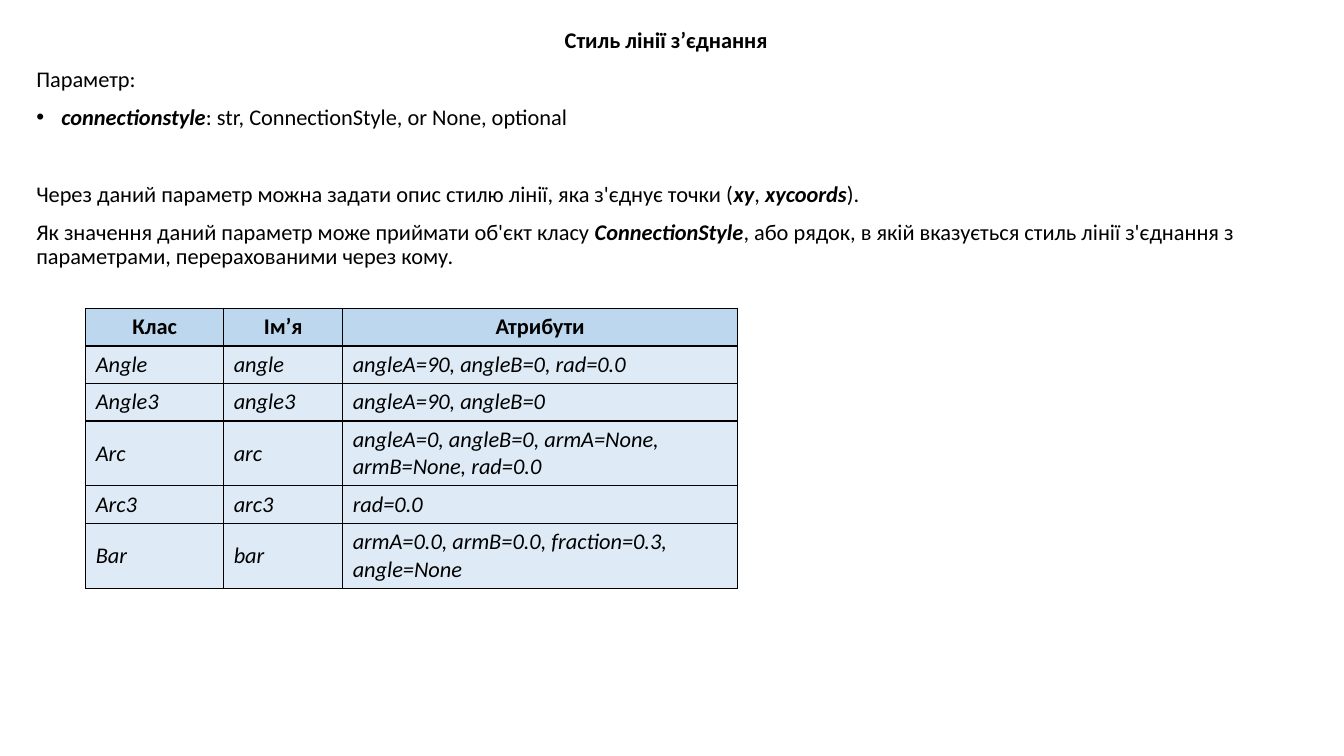
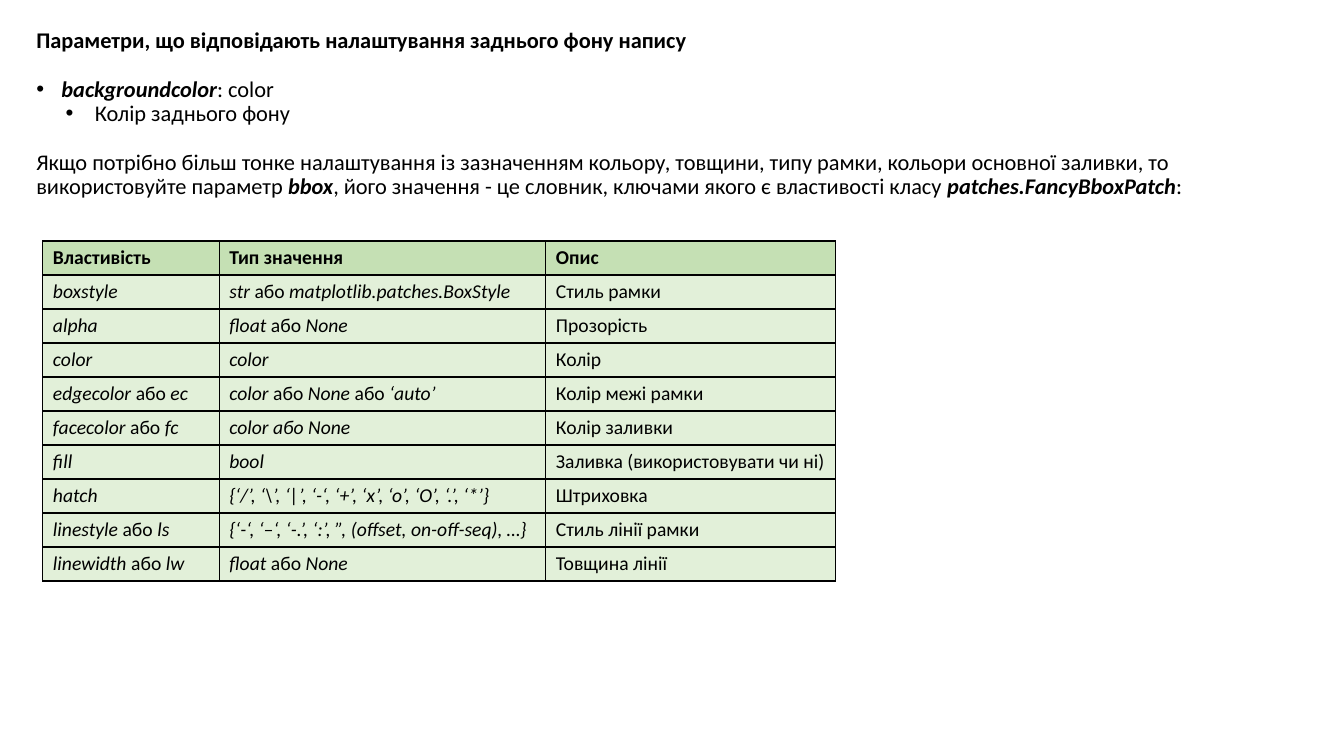
from dataclasses import dataclass

from lxml import etree
from pptx import Presentation
from pptx.dml.color import RGBColor
from pptx.enum.text import MSO_ANCHOR, MSO_AUTO_SIZE, PP_ALIGN
from pptx.oxml.ns import qn
from pptx.util import Pt

BLACK = RGBColor(0x00, 0x00, 0x00)
BLUE_HEAD = RGBColor(0xBD, 0xD7, 0xEE)
BLUE_BODY = RGBColor(0xDE, 0xEB, 0xF7)
GREEN_HEAD = RGBColor(0xC5, 0xE0, 0xB4)
GREEN_BODY = RGBColor(0xE2, 0xF0, 0xD9)

FONT = "Calibri"
TEXT_SIZE = 16
LINE_SPACING = 0.9
SLIDE_WIDTH, SLIDE_HEIGHT = 960, 540
TEXT_LEFT, TEXT_WIDTH = 18.7, 914.4
TITLE_TOP, TITLE_HEIGHT = 17.3, 24.7
BORDER_WIDTH = 1

# Left margin and first-line indent of each bullet level; level 0 has no bullet
BULLET_INDENTS = [(0, 0), (18, -18), (41.8, -20.9)]


@dataclass
class Line:
    text: str
    bullet_level: int = 0
    space_before: float = 0


@dataclass
class TableLook:
    head_fill: RGBColor
    body_fill: RGBColor
    size: float
    head_align: PP_ALIGN


def add_runs(paragraph, text, size, bold=False, emphasis_bold=False):
    """Write text, setting the parts between underscores in italics."""
    for index, piece in enumerate(text.split("_")):
        if not piece:
            continue
        emphasised = index % 2 == 1
        run = paragraph.add_run()
        run.text = piece
        font = run.font
        font.name, font.size = FONT, Pt(size)
        font.color.rgb = BLACK
        font.bold = bold or (emphasised and emphasis_bold)
        font.italic = emphasised


def place(shape, left, top, width, height):
    shape.left, shape.top = Pt(left), Pt(top)
    shape.width, shape.height = Pt(width), Pt(height)
    frame = shape.text_frame
    frame.word_wrap = True
    frame.auto_size = MSO_AUTO_SIZE.NONE
    frame.vertical_anchor = MSO_ANCHOR.TOP
    return frame


def set_bullet(paragraph, level):
    properties = paragraph._p.get_or_add_pPr()
    margin, indent = BULLET_INDENTS[level]
    properties.set("marL", str(Pt(margin)))
    properties.set("indent", str(Pt(indent)))
    if level:
        paragraph.level = level - 1
        font = etree.SubElement(properties, qn("a:buFont"))
        font.set("typeface", "Arial")
        etree.SubElement(properties, qn("a:buChar")).set("char", "•")
    else:
        etree.SubElement(properties, qn("a:buNone"))


def fill_title(slide, text, align):
    frame = place(slide.shapes.title, TEXT_LEFT, TITLE_TOP, TEXT_WIDTH, TITLE_HEIGHT)
    heading = frame.paragraphs[0]
    heading.alignment = align
    heading.line_spacing = LINE_SPACING
    heading.space_before = Pt(0)
    add_runs(heading, text, TEXT_SIZE, bold=True)


def fill_body(slide, lines, top, bottom):
    frame = place(slide.placeholders[1], TEXT_LEFT, top, TEXT_WIDTH, bottom - top)
    for index, line in enumerate(lines):
        paragraph = frame.add_paragraph() if index else frame.paragraphs[0]
        set_bullet(paragraph, line.bullet_level)
        paragraph.line_spacing = LINE_SPACING
        paragraph.space_before = Pt(line.space_before)
        add_runs(paragraph, line.text, TEXT_SIZE, emphasis_bold=True)


def add_borders(cell):
    properties = cell._tc.get_or_add_tcPr()
    for side in ("a:lnL", "a:lnR", "a:lnT", "a:lnB"):
        border = etree.SubElement(properties, qn(side))
        border.set("w", str(Pt(BORDER_WIDTH)))
        fill = etree.SubElement(border, qn("a:solidFill"))
        etree.SubElement(fill, qn("a:srgbClr")).set("val", str(BLACK))


def add_property_table(slide, left, top, widths, heights, rows, look):
    table = slide.shapes.add_table(
        len(rows), len(widths), Pt(left), Pt(top), Pt(sum(widths)), Pt(sum(heights))
    ).table
    table.horz_banding = False
    for column, width in zip(table.columns, widths):
        column.width = Pt(width)
    for row_index, (row, texts, height) in enumerate(zip(table.rows, rows, heights)):
        row.height = Pt(height)
        is_head = row_index == 0
        for cell, text in zip(row.cells, texts):
            add_borders(cell)
            cell.fill.solid()
            cell.fill.fore_color.rgb = look.head_fill if is_head else look.body_fill
            cell.vertical_anchor = MSO_ANCHOR.MIDDLE
            paragraph = cell.text_frame.paragraphs[0]
            paragraph.alignment = look.head_align if is_head else PP_ALIGN.LEFT
            add_runs(paragraph, text, look.size, bold=is_head)


def build_connection_slide(slide):
    table_top = 220.3
    fill_title(slide, "Стиль лінії з’єднання", PP_ALIGN.CENTER)
    fill_body(slide, [
        Line("Параметр:"),
        Line("_connectionstyle_: str, ConnectionStyle, or None, optional", 1, 10),
        Line("Через даний параметр можна задати опис стилю лінії, яка з'єднує точки "
             "(_xy_, _xycoords_).", space_before=37.5),
        Line("Як значення даний параметр може приймати об'єкт класу _ConnectionStyle_, "
             "або рядок, в якій вказується стиль лінії з'єднання з параметрами, "
             "перерахованими через кому.", space_before=10),
    ], top=45, bottom=table_top)
    one_line, two_lines = 26.75, 46.25
    add_property_table(
        slide, 61.2, table_top, [98.6, 85, 282.2],
        [one_line, one_line, one_line, two_lines, one_line, two_lines],
        [
            ("Клас", "Ім’я", "Атрибути"),
            ("_Angle_", "_angle_", "_angleA=90, angleB=0, rad=0.0_"),
            ("_Angle3_", "_angle3_", "_angleA=90, angleB=0_"),
            ("_Arc_", "_arc_", "_angleA=0, angleB=0, armA=None, armB=None, rad=0.0_"),
            ("_Arc3_", "_arc3_", "_rad=0.0_"),
            ("_Bar_", "_bar_", "_armA=0.0, armB=0.0, fraction=0.3, angle=None_"),
        ],
        TableLook(BLUE_HEAD, BLUE_BODY, 16, PP_ALIGN.CENTER),
    )


def build_background_slide(slide):
    table_top = 172.1
    fill_title(slide, "Параметри, що відповідають налаштування заднього фону напису",
               PP_ALIGN.LEFT)
    fill_body(slide, [
        Line("_backgroundcolor_: color", 1),
        Line("Колір заднього фону", 2),
        Line("Якщо потрібно більш тонке налаштування із зазначенням кольору, товщини, "
             "типу рамки, кольори основної заливки, то використовуйте параметр _bbox_, "
             "його значення - це словник, ключами якого є властивості класу "
             "_patches.FancyBboxPatch_:", space_before=17.5),
    ], top=52.2, bottom=table_top)
    rows = [
        ("Властивість", "Тип значення", "Опис"),
        ("_boxstyle_", "_str_ або _matplotlib.patches.BoxStyle_", "Стиль рамки"),
        ("_alpha_", "_float_ або _None_", "Прозорість"),
        ("_color_", "_color_", "Колір"),
        ("_edgecolor_ або _ec_", "_color_ або _None_ або _‘auto’_", "Колір межі рамки"),
        ("_facecolor_ або _fc_", "_color або None_", "Колір заливки"),
        ("_fill_", "_bool_", "Заливка (використовувати чи ні)"),
        ("_hatch_", "_{‘/’, ‘\\’, ‘|’, ‘-‘, ‘+’, ‘x’, ‘o’, ‘O’, ‘.’, ‘*’}_", "Штриховка"),
        ("_linestyle_ або _ls_", "_{‘-‘, ‘–‘, ‘-.’, ‘:’, ”, (offset, on-off-seq), …}_",
         "Стиль лінії рамки"),
        ("_linewidth_ або _lw_", "_float_ або _None_", "Товщина лінії"),
    ]
    add_property_table(
        slide, 30.6, table_top, [126, 233.3, 207], [24.3] * len(rows), rows,
        TableLook(GREEN_HEAD, GREEN_BODY, 14, PP_ALIGN.LEFT),
    )


def main():
    deck = Presentation()
    deck.slide_width, deck.slide_height = Pt(SLIDE_WIDTH), Pt(SLIDE_HEIGHT)
    title_and_content = deck.slide_layouts[1]
    for build in (build_connection_slide, build_background_slide):
        build(deck.slides.add_slide(title_and_content))
    deck.save("out.pptx")


if __name__ == "__main__":
    main()
